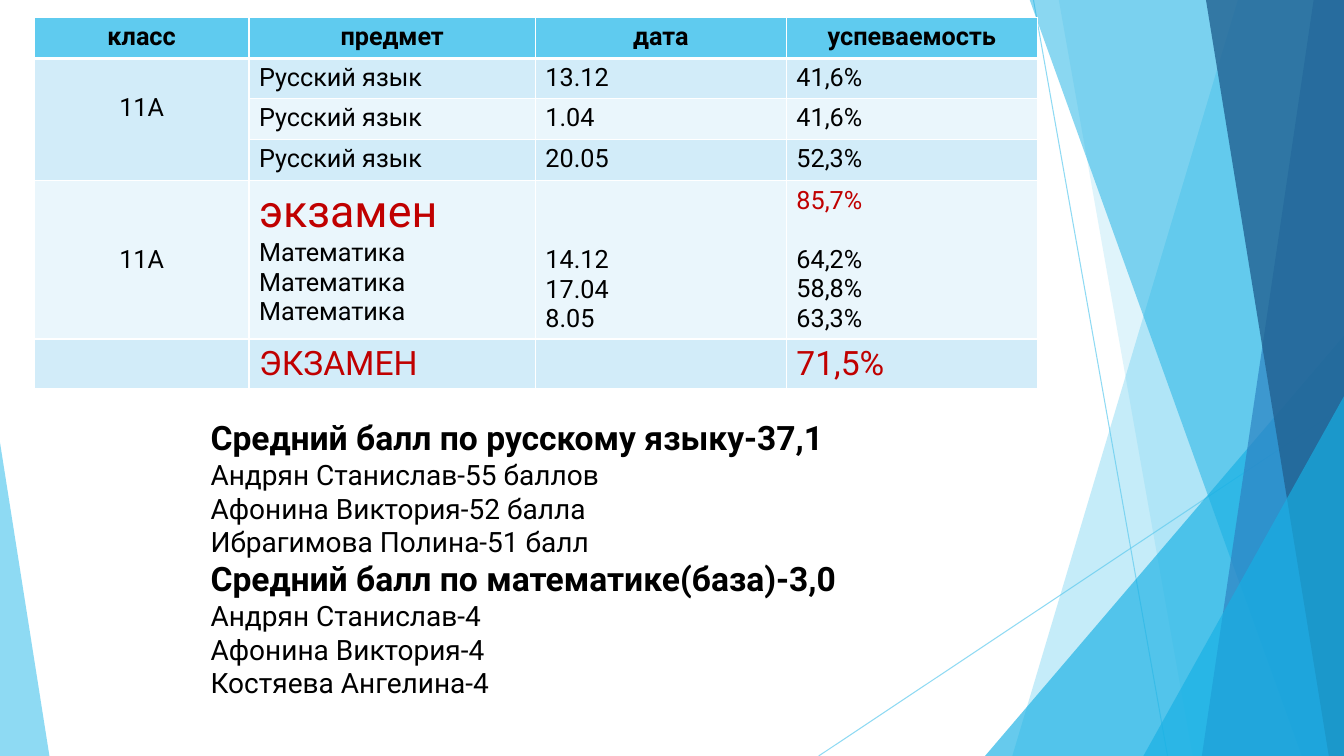
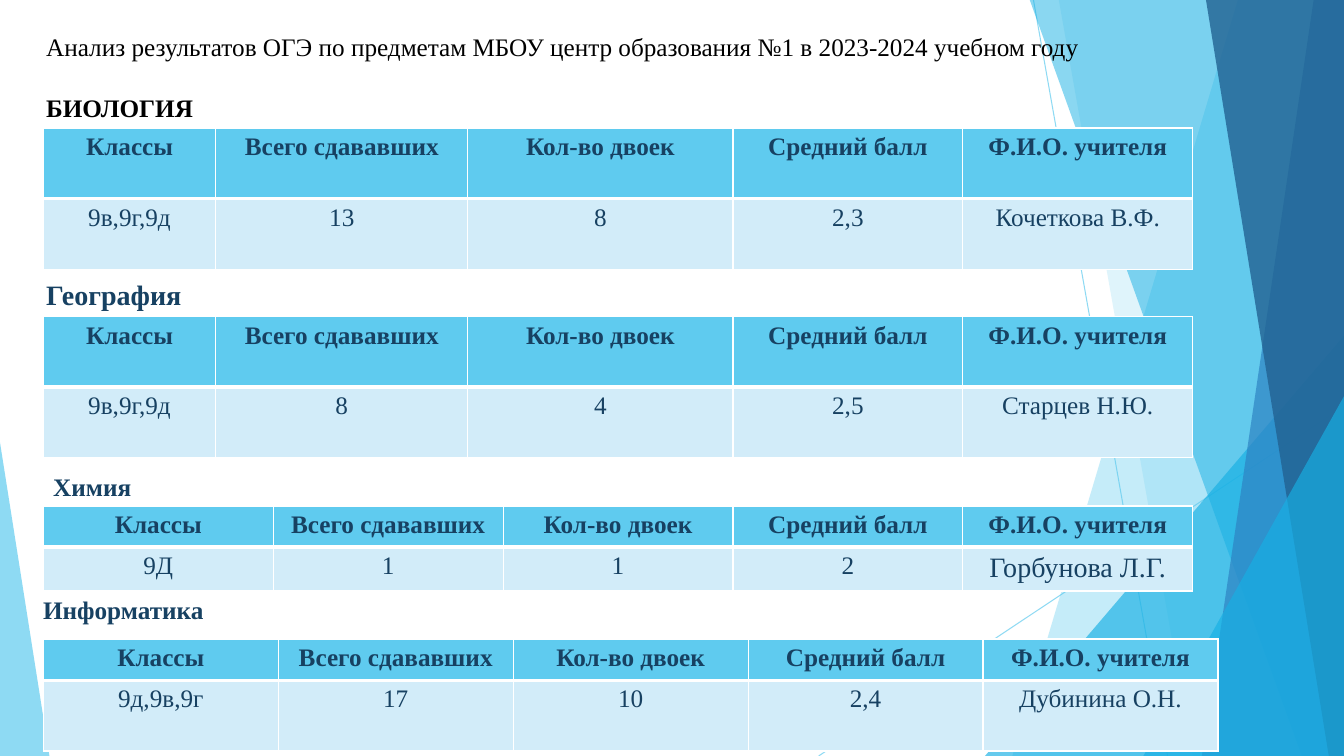
import pptx
import pptx.util
import pptx.dml.color
import pptx.enum.shapes
import pptx.enum.text
import pptx.oxml
import pptx.oxml.ns
from lxml import etree

PX = 9144  # EMU in one px, 100 px to the inch
WIDE, HIGH = 1333, 750

SKY, BLUE, SEA, NAVY = "5FCBEF", "17B0E4", "2E83C3", "226292"
PALE, MIST, WHITE = "D2ECF9", "EAF6FC", "FFFFFF"
BLACK, INK, RED = "000000", "174162", "C00000"
SANS, SERIF = "Roboto", "Times New Roman"

# Background slabs: top left x, bottom left x, colour, opacity
SLABS = [
    (1228, 1004, SKY, 36),
    (1050, 1183, SKY, 20),
    (1021, 1291, BLUE, 50),
    (1303, 1192, SEA, 70),
    (1196, 1318, NAVY, 80),
]


def px(num):
    return pptx.util.Emu(num * PX)


def tone(code):
    return pptx.dml.color.RGBColor.from_string(code)


def fade(node, share):
    """Make the colour inside a fill or line see-through."""
    mark = next(node.iter(pptx.oxml.ns.qn("a:srgbClr")))
    etree.SubElement(mark, pptx.oxml.ns.qn("a:alpha"), val=str(share * 1000))


class Deck:
    def __init__(self):
        self.file = pptx.Presentation()
        self.file.slide_width, self.file.slide_height = px(WIDE), px(HIGH)
        self.font, self.ink = SANS, BLACK

    def page(self, font, ink):
        self.font, self.ink = font, ink
        self.slide = self.file.slides.add_slide(self.file.slide_layouts[6])
        self.shapes = self.slide.shapes
        self.decor()

    # Shared background
    def decor(self):
        self.line(1025, 0, 1158, HIGH)
        self.line(WIDE, 403, 812, HIGH)
        for slab in SLABS[:2]:
            self.slab(*slab)
        self.wedge(977, 333, 356, 1, BLUE, 66)
        for slab in SLABS[2:]:
            self.slab(*slab)
        self.wedge(1134, 393, 199, 1, BLUE, 66)
        self.wedge(0, 439, 49, 0, SKY, 70)

    def line(self, x1, y1, x2, y2):
        kind = pptx.enum.shapes.MSO_CONNECTOR.STRAIGHT
        line = self.shapes.add_connector(kind, px(x1), px(y1), px(x2), px(y2))
        line.line.color.rgb = tone(SKY)
        line.line.width = pptx.util.Pt(0.75)
        props = line._element.spPr
        fade(props, 70)
        etree.SubElement(props, pptx.oxml.ns.qn("a:effectLst"))

    def paint(self, shape, code, share):
        shape.shadow.inherit = False
        shape.fill.solid()
        shape.fill.fore_color.rgb = tone(code)
        fade(shape._element.spPr, share)
        shape.line.fill.background()

    def slab(self, top, base, code, share):
        form = self.shapes.build_freeform(top, -1, scale=PX)
        form.add_line_segments([(WIDE, -1), (WIDE, HIGH), (base, HIGH)])
        self.paint(form.convert_to_shape(), code, share)

    def wedge(self, x, y, wide, tip, code, share):
        kind = pptx.enum.shapes.MSO_SHAPE.ISOSCELES_TRIANGLE
        shape = self.shapes.add_shape(kind, px(x), px(y), px(wide), px(HIGH - y))
        shape.adjustments[0] = tip
        self.paint(shape, code, share)

    # Text
    def style(self, para, size, bold=False, ink=None):
        for run in para.runs:
            run.font.name = self.font
            run.font.size = pptx.util.Pt(size)
            run.font.bold = bold
            run.font.color.rgb = tone(ink or self.ink)

    def text(self, x, y, wide, high, lines, ink=None):
        """Each line is (words, size, bold)."""
        frame = self.shapes.add_textbox(px(x), px(y), px(wide), px(high)).text_frame
        frame.word_wrap = True
        frame.text = "\n".join(line[0] for line in lines)
        for para, (_, size, bold) in zip(frame.paragraphs, lines):
            self.style(para, size, bold, ink)
        return frame

    # Tables
    def edge(self, cell, row):
        props = cell._tc.get_or_add_tcPr()
        thick = {("B", 0): 3, ("T", 1): 3}
        for side in "LRTB":
            size = pptx.util.Pt(thick.get((side, row), 1))
            props.append(pptx.oxml.parse_xml(
                f'<a:ln{side} {pptx.oxml.ns.nsdecls("a")} w="{size}"><a:solidFill>'
                f'<a:srgbClr val="{WHITE}"/></a:solidFill></a:ln{side}>'))

    def table(self, x, y, cols, rows, data, mid):
        """The columns in mid are centred, and so is the whole header."""
        grid = self.shapes.add_table(len(rows), len(cols), px(x), px(y),
                                     px(sum(cols)), px(sum(rows))).table
        for col, wide in zip(grid.columns, cols):
            col.width = px(wide)
        for i, (row, high) in enumerate(zip(grid.rows, rows)):
            row.height = px(high)
            for j, cell in enumerate(row.cells):
                self.edge(cell, i)
                cell.fill.solid()
                band = SKY if i == 0 else PALE if i % 2 else MIST
                cell.fill.fore_color.rgb = tone(band)
                cell.text_frame.text = data[i][j]
                for para in cell.text_frame.paragraphs:
                    self.style(para, 18, i == 0)
                    if i == 0 or j in mid:
                        para.alignment = pptx.enum.text.PP_ALIGN.CENTER
        return grid


def marks(deck):
    deck.page(SANS, BLACK)
    lang = "Русский язык"
    maths = "\n".join(["Математика"] * 3)
    data = [
        ["класс", "предмет", "дата", "успеваемость"],
        ["11А", lang, "13.12", "41,6%"],
        ["", lang, "1.04", "41,6%"],
        ["", lang, "20.05", "52,3%"],
        ["11А", "экзамен\n" + maths, "14.12\n17.04\n8.05",
         "85,7%\n64,2%\n58,8%\n63,3%"],
        ["", "ЭКЗАМЕН", "", "71,5%"],
    ]
    grid = deck.table(34, 17, [213, 284, 249, 249], [41, 39, 41, 41, 157, 49],
                      data, {0})
    grid.cell(1, 0).merge(grid.cell(3, 0))
    # Lower the text that starts one or two lines down
    for row, col, drop in [(1, 0, 34), (4, 0, 64), (4, 2, 64)]:
        grid.cell(row, col).margin_top = px(drop)
    grid.cell(4, 3).text_frame.paragraphs[1].space_before = pptx.util.Pt(21)
    # Exam results in red
    for row, col, size in [(4, 1, 32), (4, 3, 18), (5, 1, 24), (5, 3, 24)]:
        deck.style(grid.cell(row, col).text_frame.paragraphs[0], size, ink=RED)

    # Average scores and best pupils
    lists = [
        ("Средний балл по русскому языку-37,1",
         ["Андрян Станислав-55 баллов", "Афонина Виктория-52 балла",
          "Ибрагимова Полина-51 балл"]),
        ("Средний балл по математике(база)-3,0",
         ["Андрян Станислав-4", "Афонина Виктория-4", "Костяева Ангелина-4"]),
    ]
    lines = []
    for head, names in lists:
        lines.append((head, 24, True))
        lines += [(name, 20, False) for name in names]
    deck.text(199, 409, 751, 300, lines)


def exams(deck):
    deck.page(SERIF, INK)
    title = deck.text(36, 26, 1071, 101, [
        ("Анализ результатов ОГЭ по предметам МБОУ центр образования №1 "
         "в 2023-2024 учебном году", 18, False),
        ("БИОЛОГИЯ", 18, True)], BLACK)
    title.paragraphs[1].space_before = pptx.util.Pt(22)

    # Subject names
    for x, y, name, size in [(36, 270, "География", 20), (43, 463, "Химия", 18),
                             (33, 585, "Информатика", 18)]:
        deck.text(x, y, 300, 40, [(name, size, True)])

    # One table for each subject: top, columns, rows, results
    head = ["Классы", "Всего сдававших", "Кол-во двоек", "Средний балл",
            "Ф.И.О. учителя"]
    first = [171, 250, 263, 228, 228]
    parts = [
        (127, first, [70, 70], ["9в,9г,9д", "13", "8", "2,3", "Кочеткова В.Ф."]),
        (314, first, [70, 70], ["9в,9г,9д", "8", "4", "2,5", "Старцев Н.Ю."]),
        (502, [228] * 5, [41, 43], ["9Д", "1", "1", "2", "Горбунова Л.Г."]),
        (634, [233] * 5, [41, 70], ["9д,9в,9г", "17", "10", "2,4", "Дубинина О.Н."]),
    ]
    grids = [deck.table(43, y, cols, rows, [head, data], range(5))
             for y, cols, rows, data in parts]
    deck.style(grids[2].cell(1, 4).text_frame.paragraphs[0], 20)


def main():
    deck = Deck()
    marks(deck)
    exams(deck)
    deck.file.save("out.pptx")


if __name__ == "__main__":
    main()
